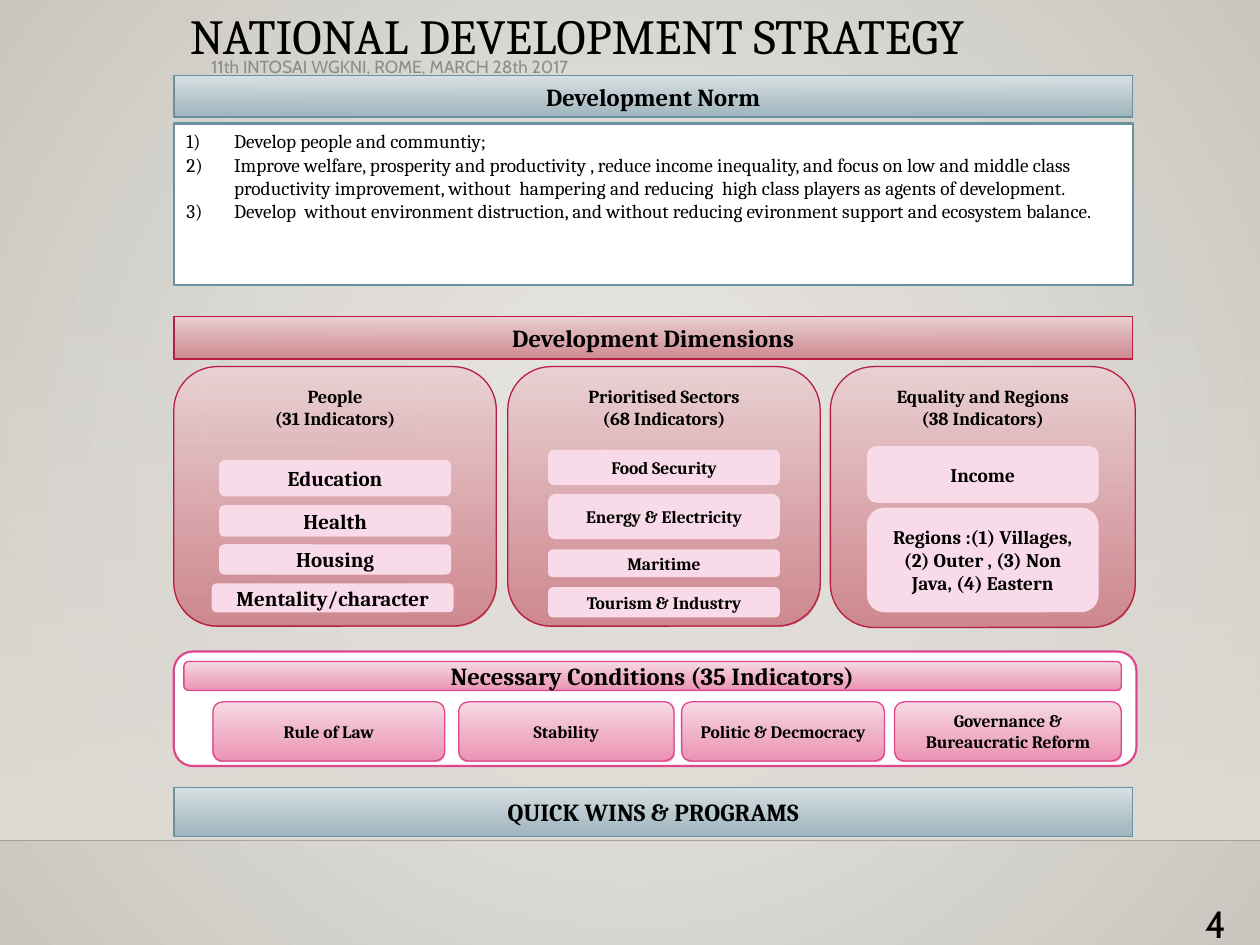
from dataclasses import dataclass
from typing import Optional

import pptx
import pptx.dml.color
import pptx.enum.dml
import pptx.enum.shapes
import pptx.enum.text
import pptx.oxml
import pptx.oxml.ns
import pptx.util
from pptx.dml.color import RGBColor
from pptx.enum.shapes import MSO_SHAPE
from pptx.enum.text import MSO_ANCHOR, PP_ALIGN
from pptx.util import Inches, Pt

BLACK = RGBColor(0x00, 0x00, 0x00)
WHITE = RGBColor(0xFF, 0xFF, 0xFF)
GREY = RGBColor(0x8C, 0x8C, 0x8C)
STONE = RGBColor(0xDF, 0xDB, 0xD5)
STONE_LIGHT = RGBColor(0xEC, 0xEA, 0xE7)
STONE_DARK = RGBColor(0xCA, 0xC7, 0xC1)
STEEL = RGBColor(0x68, 0x92, 0xA0)
STEEL_LIGHT = RGBColor(0xD9, 0xE1, 0xE4)
STEEL_MID = RGBColor(0x9A, 0xB2, 0xBC)
CRIMSON = RGBColor(0xB7, 0x1E, 0x42)
CRIMSON_LIGHT = RGBColor(0xEA, 0xD1, 0xD3)
CRIMSON_MID = RGBColor(0xCD, 0x82, 0x8A)
PINK = RGBColor(0xDE, 0x47, 0x8E)
PINK_LIGHT = RGBColor(0xF7, 0xDC, 0xE5)
PINK_MID = RGBColor(0xEA, 0x8A, 0xAE)
PINK_PALE = RGBColor(0xF8, 0xDA, 0xE8)

SERIF, SANS = "Cambria", "Cabin"
LEFT, WIDTH = 1.38, 7.61
CHIP_WIDTH = 1.84


@dataclass(frozen=True)
class Style:
    fill: RGBColor
    fill_end: Optional[RGBColor] = None
    line: Optional[RGBColor] = None
    line_width: float = 0.75
    alphas: tuple[int, int] = (100, 92)


@dataclass(frozen=True)
class Chip:
    text: str
    top: float
    height: float
    left: Optional[float] = None
    width: float = CHIP_WIDTH


@dataclass(frozen=True)
class Dimension:
    name: str
    indicators: str
    left: float
    width: float
    height: float
    chip_left: float
    chip_size: float
    chips: tuple[Chip, ...]


STEEL_BAND = Style(STEEL_LIGHT, STEEL_MID, STEEL)
CRIMSON_BAND = Style(CRIMSON_LIGHT, CRIMSON_MID, CRIMSON)
PINK_BAND = Style(PINK_LIGHT, PINK_MID, PINK)
CHIP = Style(PINK_PALE)

NORMS = (
    "Develop people and communtiy;",
    "Improve welfare, prosperity and productivity , reduce income inequality, and focus on "
    "low and middle class productivity improvement, without  hampering and reducing  high "
    "class players as agents of development.",
    "Develop  without environment distruction, and without reducing evironment support and "
    "ecosystem balance.",
)
DIMENSIONS = (
    Dimension("People", "(31 Indicators)", LEFT, 2.56, 2.06, 1.74, 12, (
        Chip("Education", 3.65, 0.29),
        Chip("Health", 4.01, 0.25),
        Chip("Housing", 4.32, 0.24),
        Chip("Mentality/character", 4.63, 0.23, left=1.68, width=1.92),
    )),
    Dimension("Prioritised Sectors", "(68 Indicators)", 4.03, 2.48, 2.06, 4.35, 10, (
        Chip("Food Security", 3.57, 0.28),
        Chip("Energy & Electricity", 3.92, 0.36),
        Chip("Maritime", 4.36, 0.22),
        Chip("Tourism & Industry", 4.66, 0.24),
    )),
    Dimension("Equality and Regions", "(38 Indicators)", 6.59, 2.42, 2.07, 6.88, 11, (
        Chip("Income", 3.54, 0.45),
        Chip("Regions :(1) Villages, (2) Outer , (3) Non Java, (4) Eastern", 4.03, 0.83),
    )),
)
CONDITIONS = (
    ("Rule of Law", 1.69, 1.84),
    ("Stability", 3.64, 1.71),
    ("Politic & Decmocracy", 5.41, 1.61),
    ("Governance & Bureaucratic Reform", 7.1, 1.8),
)


def set_gradient(fill, colors, alphas=(100, 100)) -> None:
    """Fill from top to bottom, with opacities in percent."""
    fill.gradient()
    fill.gradient_angle = 270
    for stop, color in zip(fill.gradient_stops, colors):
        stop.color.rgb = color
    return None


def set_opacity(element, alphas) -> None:
    """Give each gradient stop under the element its opacity in percent."""
    for color, alpha in zip(element.xpath(".//a:gs/a:srgbClr"), alphas):
        if alpha < 100:
            node = pptx.oxml.parse_xml(
                f'<a:alpha {pptx.oxml.ns.nsdecls("a")} val="{alpha * 1000}"/>')
            color.append(node)


def write(shape, lines, size, font=SERIF, color=BLACK, bold=False,
          align=PP_ALIGN.LEFT, anchor=MSO_ANCHOR.MIDDLE, numbered=False,
          spacing=None) -> None:
    frame = shape.text_frame
    frame.word_wrap = True
    frame.vertical_anchor = anchor
    for index, line in enumerate(lines):
        paragraph = frame.paragraphs[0] if index == 0 else frame.add_paragraph()
        paragraph.alignment = align
        if spacing:
            paragraph.line_spacing = spacing
        if numbered:
            properties = paragraph._p.get_or_add_pPr()
            properties.set("marL", str(Inches(0.38)))
            properties.set("indent", str(-Inches(0.38)))
            properties.append(pptx.oxml.parse_xml(
                f'<a:buAutoNum {pptx.oxml.ns.nsdecls("a")} type="arabicParenR"/>'))
        run = paragraph.add_run()
        run.text = line
        run.font.name = font
        run.font.size = Pt(size)
        run.font.bold = bold
        run.font.color.rgb = color


def add_box(slide, left, top, width, height, style: Style, rounded=False):
    kind = MSO_SHAPE.ROUNDED_RECTANGLE if rounded else MSO_SHAPE.RECTANGLE
    box = slide.shapes.add_shape(
        kind, Inches(left), Inches(top), Inches(width), Inches(height))
    box.shadow.inherit = False
    if style.fill_end is None:
        box.fill.solid()
        box.fill.fore_color.rgb = style.fill
    else:
        set_gradient(box.fill, (style.fill, style.fill_end))
        set_opacity(box.element, style.alphas)
    if style.line is None:
        box.line.fill.background()
    else:
        box.line.color.rgb = style.line
        box.line.width = Pt(style.line_width)
    return box


def add_label(slide, text, left, top, width, height, style, size, rounded=False) -> None:
    box = add_box(slide, left, top, width, height, style, rounded)
    write(box, (text,), size, bold=True, align=PP_ALIGN.CENTER)


def add_text(slide, text, left, top, width, height, size, **options) -> None:
    box = slide.shapes.add_textbox(
        Inches(left), Inches(top), Inches(width), Inches(height))
    write(box, (text,), size, **options)


def add_backdrop(slide) -> None:
    set_gradient(slide.background.fill, (STONE_LIGHT, STONE_DARK))
    direction = slide.element.xpath("./p:cSld/p:bg//a:gradFill/a:lin")[0]
    direction.getparent().replace(direction, pptx.oxml.parse_xml(
        f'<a:path {pptx.oxml.ns.nsdecls("a")} path="circle">'
        '<a:fillToRect l="50000" t="50000" r="50000" b="50000"/></a:path>'))
    add_box(slide, 0, 2.2, 10, 4.46, Style(STONE, STONE, alphas=(0, 100)))
    horizon = slide.shapes.add_connector(
        pptx.enum.shapes.MSO_CONNECTOR.STRAIGHT,
        Inches(0), Inches(6.67), Inches(10), Inches(6.67))
    horizon.line.color.rgb = RGBColor(0xA9, 0xA2, 0x9C)
    horizon.line.width = Pt(1)
    horizon.element.spPr.append(pptx.oxml.parse_xml(
        f'<a:effectLst {pptx.oxml.ns.nsdecls("a")}/>'))


def add_dimension(slide, dimension: Dimension) -> None:
    panel = add_box(slide, dimension.left, 2.91, dimension.width, dimension.height,
                    CRIMSON_BAND, rounded=True)
    write(panel, (dimension.name, dimension.indicators), 10.5, bold=True,
          align=PP_ALIGN.CENTER, anchor=MSO_ANCHOR.TOP)
    for chip in dimension.chips:
        left = dimension.chip_left if chip.left is None else chip.left
        add_label(slide, chip.text, left, chip.top, chip.width, chip.height, CHIP,
                  dimension.chip_size, rounded=True)


def main() -> None:
    deck = pptx.Presentation()
    deck.slide_width, deck.slide_height = Inches(10), Inches(7.5)
    slide = deck.slides.add_slide(deck.slide_layouts[6])
    add_backdrop(slide)
    add_text(slide, "NATIONAL DEVELOPMENT STRATEGY", 1.41, -0.08, 7.73, 0.77, 28, spacing=0.9)
    add_text(slide, "11th INTOSAI WGKNI, ROME, MARCH 28th 2017", 1.58, 0.36, 4.41, 0.34, 10,
             font=SANS, color=GREY)
    add_text(slide, "4", 7.58, 7.1, 2.25, 0.4, 21.7, font=SANS, align=PP_ALIGN.RIGHT,
             anchor=MSO_ANCHOR.TOP)

    for heading, top, height, style in (
        ("Development Norm", 0.6, 0.33, STEEL_BAND),
        ("Development Dimensions", 2.51, 0.34, CRIMSON_BAND),
        ("QUICK WINS & PROGRAMS", 6.25, 0.39, STEEL_BAND),
    ):
        add_label(slide, heading, LEFT, top, WIDTH, height, style, 14)

    norms = add_box(slide, LEFT, 0.98, WIDTH, 1.28, Style(WHITE, line=STEEL, line_width=1.25))
    write(norms, NORMS, 11, anchor=MSO_ANCHOR.TOP, numbered=True)
    for dimension in DIMENSIONS:
        add_dimension(slide, dimension)

    add_box(slide, LEFT, 5.17, 7.64, 0.91, Style(WHITE, line=PINK, line_width=1.25), rounded=True)
    add_label(slide, "Necessary Conditions (35 Indicators)", 1.46, 5.25, 7.44, 0.23,
              PINK_BAND, 14, rounded=True)
    for condition, left, width in CONDITIONS:
        add_label(slide, condition, left, 5.57, width, 0.47, PINK_BAND, 10, rounded=True)
    deck.save("out.pptx")


if __name__ == "__main__":
    main()
